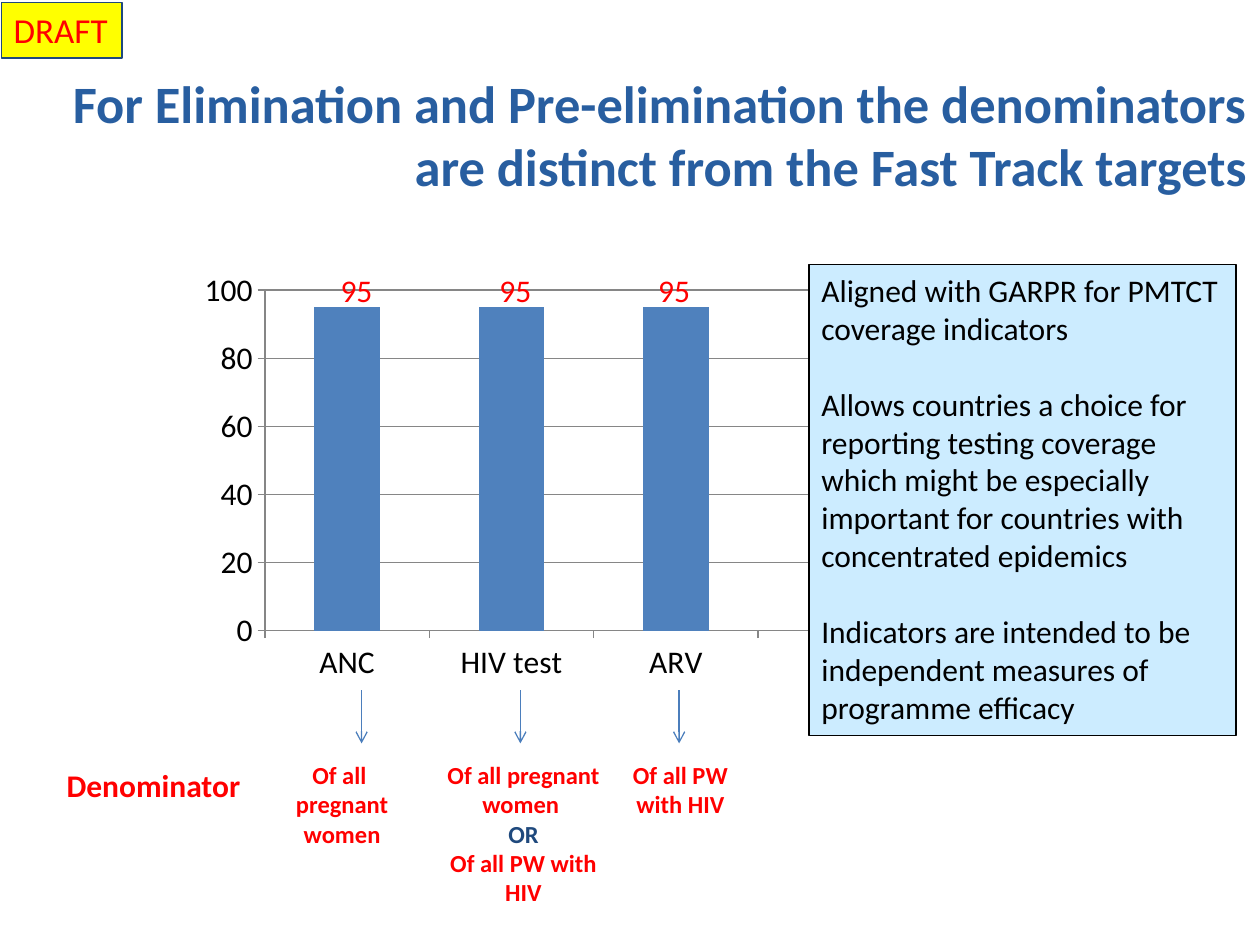
from lxml import etree
from pptx import Presentation
from pptx.chart.data import CategoryChartData
from pptx.dml.color import RGBColor
from pptx.enum.chart import XL_CHART_TYPE, XL_TICK_MARK
from pptx.enum.shapes import MSO_CONNECTOR, MSO_SHAPE
from pptx.enum.text import MSO_ANCHOR, MSO_AUTO_SIZE, PP_ALIGN
from pptx.oxml import parse_xml
from pptx.oxml.ns import nsdecls, qn
from pptx.util import Inches, Pt

COLUMN = XL_CHART_TYPE.COLUMN_CLUSTERED
OUT, NONE = XL_TICK_MARK.OUTSIDE, XL_TICK_MARK.NONE
LEFT, MID, RIGHT = PP_ALIGN.LEFT, PP_ALIGN.CENTER, PP_ALIGN.RIGHT
FONT = "Calibri"
BLACK = RGBColor(0x00, 0x00, 0x00)
RED = RGBColor(0xFF, 0x00, 0x00)
NAVY = RGBColor(0x1F, 0x49, 0x7D)
TITLE = RGBColor(0x28, 0x5E, 0xA0)
BAR = RGBColor(0x4F, 0x81, 0xBD)
ARROW = RGBColor(0x4B, 0x7E, 0xBC)
GREY = RGBColor(0x86, 0x86, 0x86)
SKY = RGBColor(0xCC, 0xEC, 0xFF)
YELLOW = RGBColor(0xFF, 0xFF, 0x00)

# Grid: three columns of notes under the bars, shared top for chart and panel
COL, STEP = 2.87, 1.26
TOP = 2.1


def write(shape, lines, size, color, bold=False, align=LEFT, gap=0, wrap=True):
    frame = shape.text_frame
    frame.text = "\n".join(lines)
    frame.word_wrap = wrap
    frame.auto_size = MSO_AUTO_SIZE.NONE
    frame.vertical_anchor = MSO_ANCHOR.TOP
    for i, para in enumerate(frame.paragraphs):
        para.alignment = align
        para.space_before = Pt(gap if i else 0)
        for run in para.runs:
            run.font.name, run.font.size = FONT, Pt(size)
            run.font.bold, run.font.color.rgb = bold, color


def panel(x, y, w, h, fill, edge):
    box = slide.shapes.add_shape(
        MSO_SHAPE.RECTANGLE, Inches(x), Inches(y), Inches(w), Inches(h))
    box.shadow.inherit = False
    box.fill.solid()
    box.fill.fore_color.rgb = fill
    box.line.color.rgb, box.line.width = edge, Pt(0.75)
    return box


deck = Presentation()
deck.slide_width, deck.slide_height = Inches(10), Inches(7.5)
slide = deck.slides.add_slide(deck.slide_layouts[5])

# Title
title = slide.shapes.title
title.left, title.top = Inches(0), Inches(0.51)
title.width, title.height = Inches(10), Inches(1.35)
write(title, ["For Elimination and Pre-elimination the denominators "
              "are distinct from the Fast Track targets"],
      30, TITLE, True, RIGHT)

# Column chart, with a fourth slot left empty behind the panel
data = CategoryChartData()
data.categories = ["ANC", "HIV test", "ARV", ""]
data.add_series("Series 1", [95, 95, 95, None])
chart = slide.shapes.add_chart(
    COLUMN, Inches(1.51), Inches(TOP), Inches(5.93), Inches(3.38), data).chart
chart.has_legend = chart.has_title = False
chart.font.name, chart.font.size = FONT, Pt(18)
chart.font.color.rgb = BLACK
plot = chart.plots[0]
plot.gap_width, plot.vary_by_categories = 150, False
fill = plot.series[0].format.fill
fill.solid()
fill.fore_color.rgb = BAR

scale = chart.value_axis
scale.minimum_scale, scale.maximum_scale, scale.major_unit = 0, 100, 20
scale.has_major_gridlines = True
for axis in (scale, chart.category_axis):
    axis.major_tick_mark, axis.minor_tick_mark = OUT, NONE
    axis.format.line.color.rgb = GREY
scale.major_gridlines.format.line.color.rgb = GREY

# Inner plot area as shares of the chart
area = chart._chartSpace.chart.plotArea
for old in area.findall(qn("c:layout")):
    area.remove(old)
area.insert(0, parse_xml(
    f'<c:layout {nsdecls("c")}><c:manualLayout><c:layoutTarget val="inner"/>'
    '<c:xMode val="edge"/><c:yMode val="edge"/><c:x val="0.1"/>'
    '<c:y val="0.06"/><c:w val="0.88"/><c:h val="0.8"/>'
    '</c:manualLayout></c:layout>'))

# Bar values and arrows
for i in range(3):
    x = COL + i * STEP
    label = slide.shapes.add_textbox(
        Inches(x - 0.34), Inches(TOP), Inches(0.6), Inches(0.4))
    write(label, ["95"], 18, RED, align=MID)
    arrow = slide.shapes.add_connector(
        MSO_CONNECTOR.STRAIGHT, Inches(x), Inches(5.48), Inches(x), Inches(5.9))
    arrow.line.color.rgb, arrow.line.width = ARROW, Pt(0.75)
    etree.SubElement(arrow.line._get_or_add_ln(), qn("a:tailEnd"), type="arrow")
    etree.SubElement(arrow._element.spPr, qn("a:effectLst"))

# Denominators
notes = [
    (2.17, 1.09, 0.81, ["Of all ", "pregnant women"]),
    (3.33, 1.65, 1.28, ["Of all pregnant women ", "OR", "Of all PW with HIV"]),
    (4.84, 1.12, 0.57, ["Of all PW with HIV"]),
]
for x, w, h, lines in notes:
    note = slide.shapes.add_textbox(
        Inches(x), Inches(5.98), Inches(w), Inches(h))
    write(note, lines, 14, RED, True, MID)
    for para in note.text_frame.paragraphs:
        if para.text == "OR":
            para.runs[0].font.color.rgb = NAVY
head = slide.shapes.add_textbox(
    Inches(0.43), Inches(6.03), Inches(1.59), Inches(0.4))
write(head, ["Denominator"], 18, RED, True, wrap=False)

# Side panel and draft tag
side = panel(6.42, TOP, 3.39, 3.74, SKY, BLACK)
write(side, [
    "Aligned with GARPR for PMTCT coverage indicators",
    "Allows countries a choice for reporting testing coverage which might be "
    "especially important for countries with concentrated epidemics",
    "Indicators are intended to be independent measures of programme efficacy",
], 18, BLACK, gap=22)
tag = panel(0.01, 0.02, 0.96, 0.44, YELLOW, NAVY)
write(tag, ["DRAFT"], 20, RED, wrap=False)

deck.save("out.pptx")
